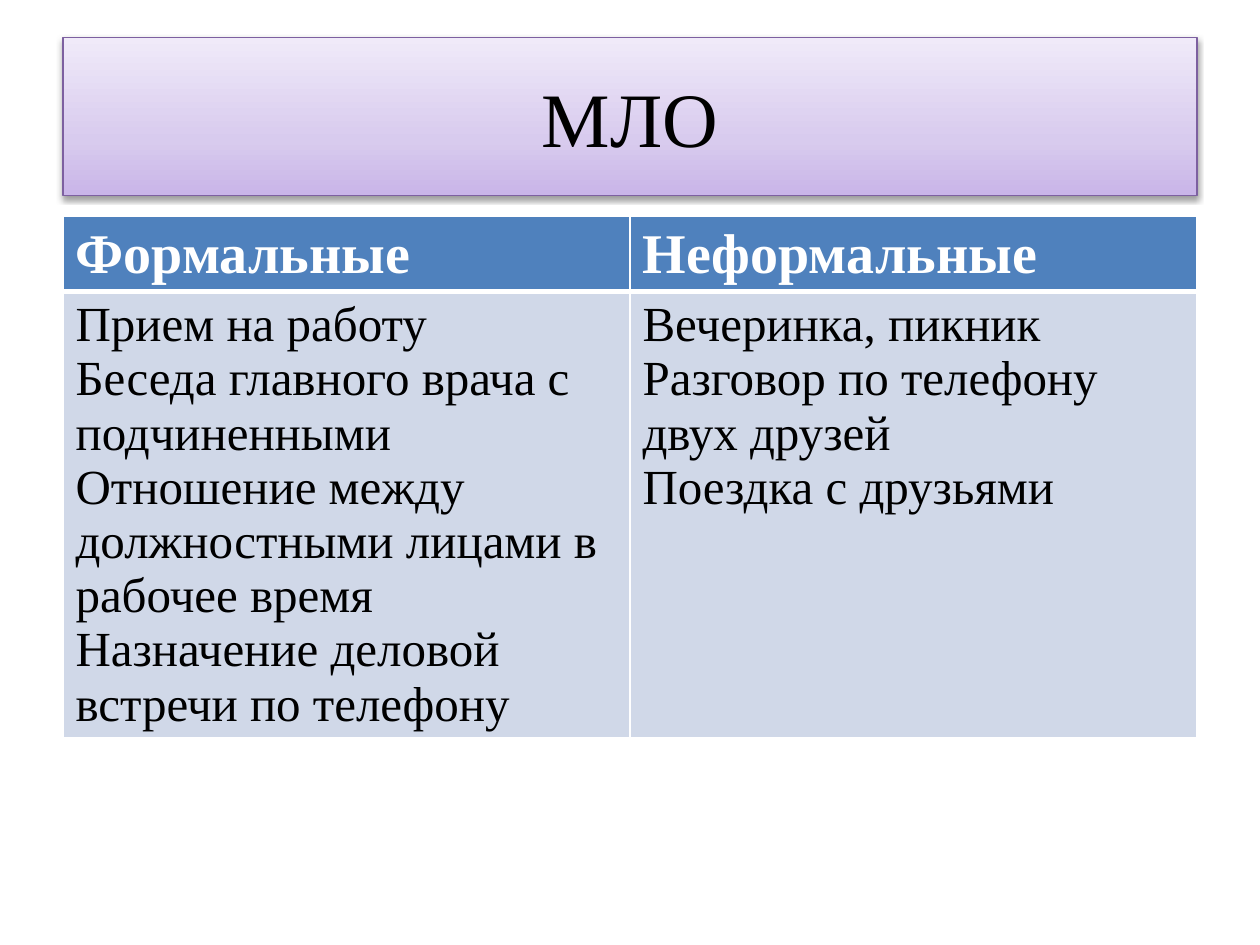
"""Build a slide comparing formal and informal interpersonal relations."""
from dataclasses import dataclass

from pptx import Presentation
from pptx.dml.color import RGBColor
from pptx.enum import text
from pptx.oxml import parse_xml
from pptx.oxml.ns import nsdecls
from pptx.util import Inches, Pt


@dataclass(frozen=True)
class Theme:
    font: str = "Times New Roman"
    title_size: int = 44
    header_size: int = 32
    body_size: int = 28
    ink: str = "000000"
    paper: str = "FFFFFF"
    header_fill: str = "4F81BD"
    body_fill: str = "D0D8E8"
    title_line: str = "7D60A0"
    title_gradient: tuple = ((0, "C9B5E8"), (35, "D8CBEE"), (100, "F0EAF9"))


@dataclass(frozen=True)
class Relation:
    heading: str
    examples: tuple[str, ...]


THEME = Theme()
LEFT, WIDTH = 0.5, 9
ROW_HEIGHTS = (0.59, 3.54)
RELATIONS = (
    Relation("Формальные", (
        "Прием на работу",
        "Беседа главного врача с подчиненными",
        "Отношение между должностными лицами в рабочее время",
        "Назначение деловой встречи по телефону",
    )),
    Relation("Неформальные", (
        "Вечеринка, пикник",
        "Разговор по телефону двух друзей",
        "Поездка с друзьями",
    )),
)


def write_lines(frame, lines: tuple[str, ...], size: int, color: str, bold: bool = False) -> None:
    """Fill a text frame with one paragraph per line."""
    frame.text = "\n".join(lines)
    for paragraph in frame.paragraphs:
        font = paragraph.font
        font.name, font.size, font.bold = THEME.font, Pt(size), bold
        font.color.rgb = RGBColor.from_string(color)


def draw_title(title, wording: str) -> None:
    """Format the title placeholder as a shaded banner."""
    title.left, title.top = Inches(LEFT), Inches(0.3)
    title.width, title.height = Inches(WIDTH), Inches(1.25)
    write_lines(title.text_frame, (wording,), THEME.title_size, THEME.ink)
    title.text_frame.vertical_anchor = text.MSO_ANCHOR.MIDDLE
    title.text_frame.paragraphs[0].alignment = text.PP_ALIGN.CENTER
    stops = "".join(
        f'<a:gs pos="{position * 1000}"><a:srgbClr val="{color}"/></a:gs>'
        for position, color in THEME.title_gradient
    )
    properties = title.element.spPr
    properties.append(parse_xml(
        f'<a:gradFill {nsdecls("a")} rotWithShape="1"><a:gsLst>{stops}</a:gsLst>'
        '<a:lin ang="16200000" scaled="1"/></a:gradFill>'
    ))
    title.line.color.rgb = RGBColor.from_string(THEME.title_line)
    title.line.width = Pt(0.75)
    properties.append(parse_xml(
        f'<a:effectLst {nsdecls("a")}><a:outerShdw blurRad="{Pt(3.1)}" dist="{Pt(1.6)}" '
        f'dir="5400000" rotWithShape="0"><a:srgbClr val="{THEME.ink}">'
        '<a:alpha val="38000"/></a:srgbClr></a:outerShdw></a:effectLst>'
    ))


def style_cell(cell, fill: str, top: float, bottom: float) -> None:
    """Give a cell its white borders and solid fill."""
    properties = cell._tc.get_or_add_tcPr()
    for side, width in (("L", 1), ("R", 1), ("T", top), ("B", bottom)):
        properties.append(parse_xml(
            f'<a:ln{side} {nsdecls("a")} w="{Pt(width)}"><a:solidFill>'
            f'<a:srgbClr val="{THEME.paper}"/></a:solidFill></a:ln{side}>'
        ))
    cell.fill.solid()
    cell.fill.fore_color.rgb = RGBColor.from_string(fill)


def draw_relations(slide, relations: tuple[Relation, ...]) -> None:
    """Draw the table with one column per kind of relation."""
    table = slide.shapes.add_table(
        len(ROW_HEIGHTS), len(relations), Inches(LEFT), Inches(1.72),
        Inches(WIDTH), Inches(sum(ROW_HEIGHTS)),
    ).table
    for row, height in zip(table.rows, ROW_HEIGHTS):
        row.height = Inches(height)
    for column, relation in enumerate(relations):
        heading, examples = table.cell(0, column), table.cell(1, column)
        write_lines(heading.text_frame, (relation.heading,), THEME.header_size, THEME.paper, True)
        write_lines(examples.text_frame, relation.examples, THEME.body_size, THEME.ink)
        style_cell(heading, THEME.header_fill, 1, 3)
        style_cell(examples, THEME.body_fill, 3, 1)


def main() -> None:
    """Create and save the presentation."""
    deck = Presentation()
    deck.slide_width, deck.slide_height = Inches(10), Inches(7.5)
    slide = deck.slides.add_slide(deck.slide_layouts[5])
    draw_title(slide.shapes.title, "МЛО")
    draw_relations(slide, RELATIONS)
    deck.save("out.pptx")


if __name__ == "__main__":
    main()
